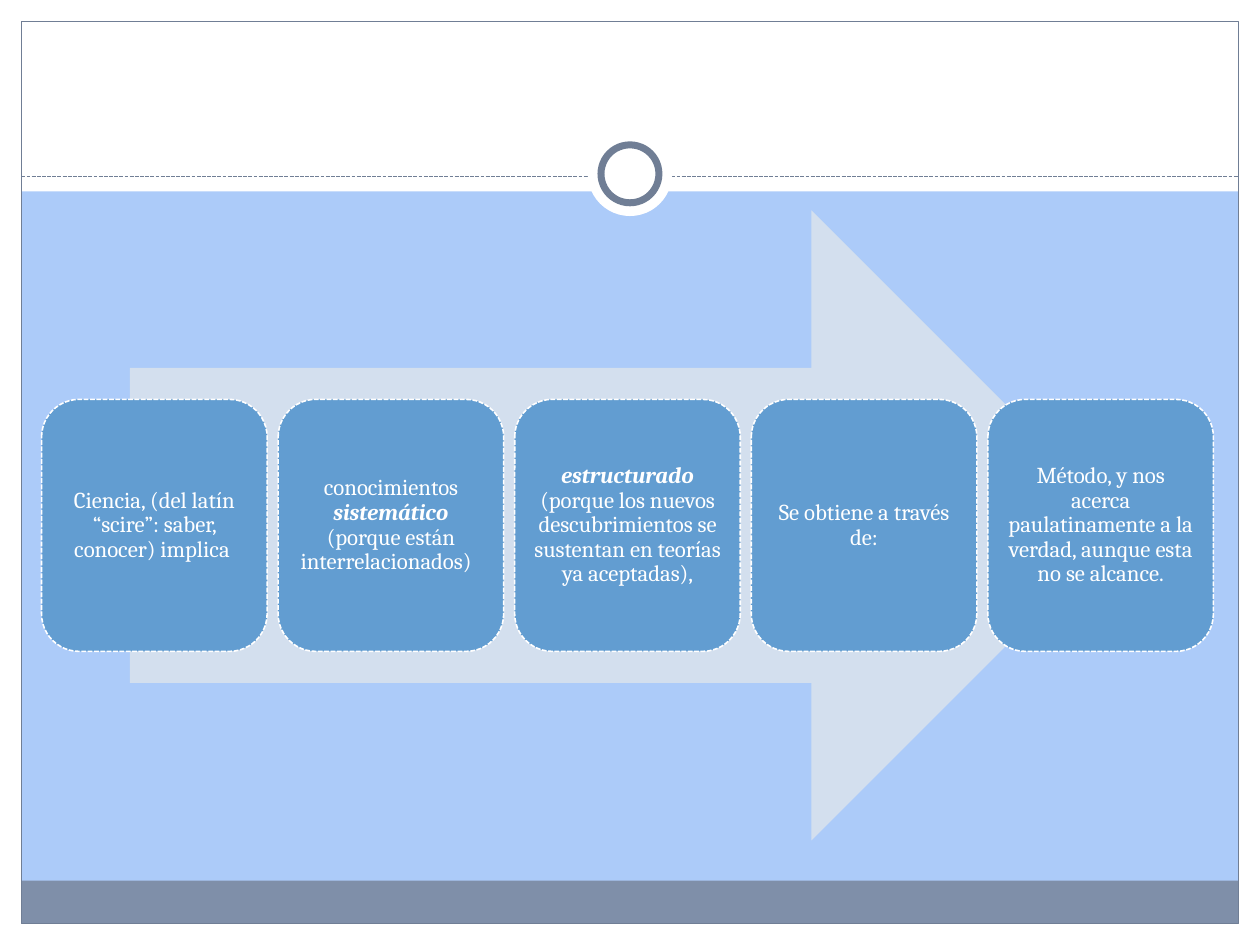
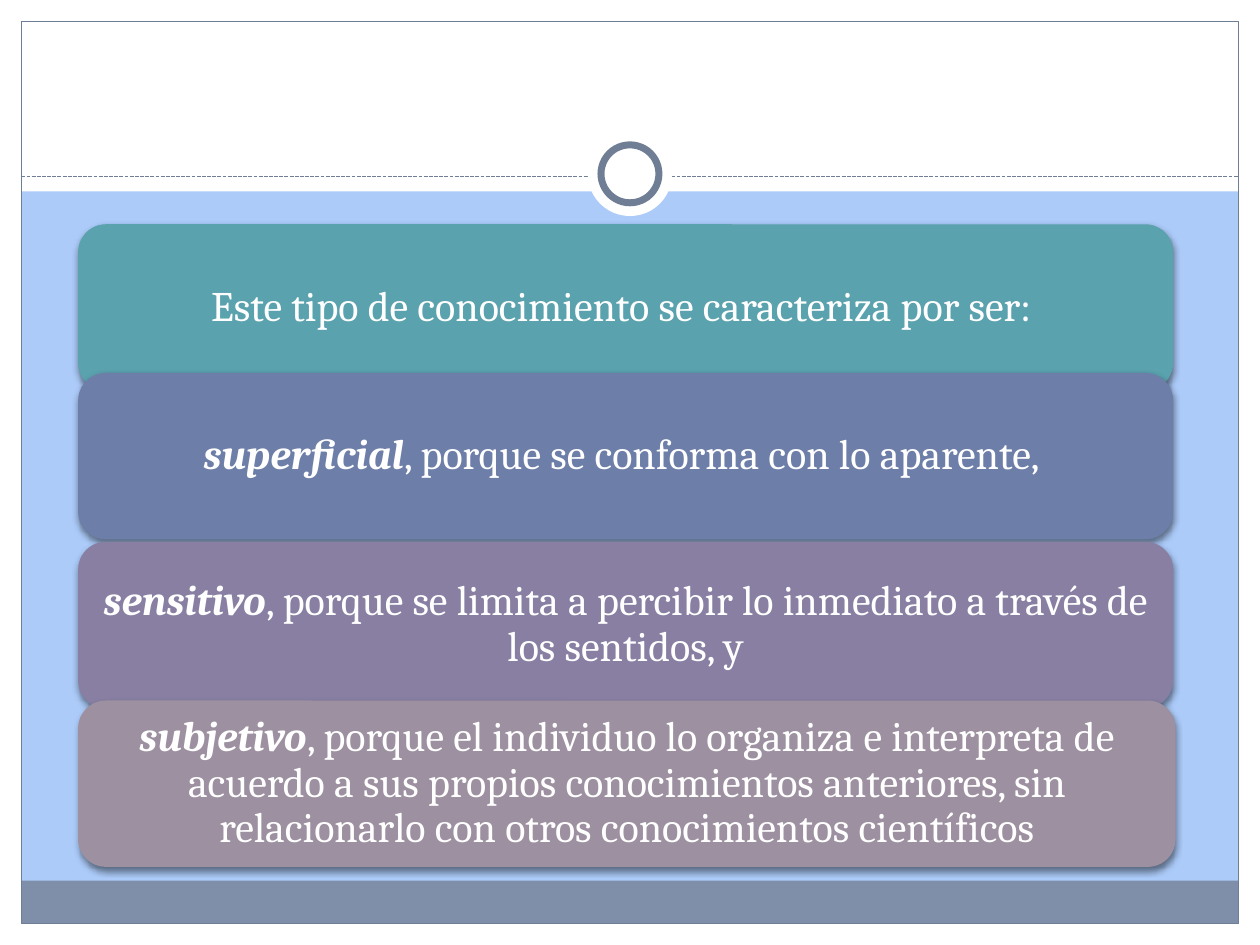
from lxml.etree import SubElement
from pptx import Presentation
from pptx.dml.color import RGBColor
from pptx.enum.dml import MSO_LINE
from pptx.enum.shapes import MSO_CONNECTOR, MSO_SHAPE
from pptx.enum.text import MSO_ANCHOR, PP_ALIGN
from pptx.oxml.ns import qn
from pptx.util import Inches, Pt

WHITE, SKY, BAND, FRAME = "FFFFFF", "ACCBF9", "7F8FA9", "707E95"
ARROW, CARD = "D3DFEE", "629DD1"
FONT = "Cambria"
EDGE = 0.17
PLAIN, STRONG = {"bold": False, "italic": False}, {"bold": True, "italic": True}

STEPS = [
    [("Ciencia, (del latín “scire”: saber, conocer) implica ", PLAIN)],
    [("conocimientos ", PLAIN), ("sistemático ", STRONG),
     ("(porque están interrelacionados)  ", PLAIN)],
    [("estructurado ", STRONG),
     ("(porque los nuevos descubrimientos se sustentan en teorías ya aceptadas),", PLAIN)],
    [("Se obtiene a través de:", PLAIN)],
    [("Método, y nos acerca paulatinamente a la verdad, aunque esta no se alcance.", PLAIN)],
]

TRAITS = [
    (0, 8.69, "5AA2AE", [("Este tipo de conocimiento se caracteriza por ser: ", PLAIN)]),
    (1.18, 8.69, "6D7FA8", [("superficial", STRONG),
                            (", porque se conforma con lo aparente, ", PLAIN)]),
    (2.52, 8.69, "887FA3", [("sensitivo", STRONG),
                            (", porque se limita a percibir lo inmediato a través de "
                             "los sentidos, y", PLAIN)]),
    (3.78, 8.71, "9D90A0", [("subjetivo", STRONG),
                            (", porque el individuo lo organiza e interpreta de acuerdo a sus "
                             "propios conocimientos anteriores, sin relacionarlo con otros "
                             "conocimientos científicos", PLAIN)]),
]


def rgb(value):
    return RGBColor.from_string(value)


def apply(target, values):
    for name, value in values.items():
        setattr(target, name, value)


def style_line(line, color, width, dash=None):
    line.color.rgb = rgb(color)
    apply(line, {"width": Pt(width), "dash_style": dash})


def add_box(s, kind, box, fill=None, line=None):
    sp = s.shapes.add_shape(kind, *map(Inches, box))
    sp.shadow.inherit = False
    if fill:
        sp.fill.solid()
        sp.fill.fore_color.rgb = rgb(fill)
    else:
        sp.fill.background()
    if line:
        style_line(sp.line, *line)
    else:
        sp.line.fill.background()
    return sp


def write(sp, runs, size, side=0.1):
    tf = sp.text_frame
    apply(tf, {"word_wrap": True, "vertical_anchor": MSO_ANCHOR.MIDDLE,
               "margin_left": Inches(side), "margin_right": Inches(side),
               "margin_top": Inches(0.05), "margin_bottom": Inches(0.05)})
    p = tf.paragraphs[0]
    apply(p, {"alignment": PP_ALIGN.CENTER, "line_spacing": 0.9})
    for text, emphasis in runs:
        r = p.add_run()
        r.text = text
        apply(r.font, {"name": FONT, "size": Pt(size), **emphasis})
        r.font.color.rgb = rgb(WHITE)


def cast_shadow(sp):
    effects = sp._element.spPr.find(qn("a:effectLst"))
    shadow = SubElement(effects, qn("a:outerShdw"), blurRad=str(Pt(4)), dist=str(Pt(2)),
                        dir="5400000", algn="ctr", rotWithShape="0")
    color = SubElement(shadow, qn("a:srgbClr"), val="000000")
    SubElement(color, qn("a:alpha"), val="45000")


def draw_frame(s, width, height):
    s.background.fill.solid()
    s.background.fill.fore_color.rgb = rgb(SKY)
    inner = width - 2 * EDGE
    for box in [(0, height - EDGE, width, EDGE), (0, 0, width, 1.52),
                (0, 0, EDGE, height), (width - EDGE, 0, EDGE, height)]:
        add_box(s, MSO_SHAPE.RECTANGLE, box, WHITE)
    add_box(s, MSO_SHAPE.RECTANGLE, (EDGE, 6.99, inner, 0.34), BAND)
    add_box(s, MSO_SHAPE.RECTANGLE, (EDGE, EDGE, inner, height - 2 * EDGE),
            line=(FRAME, 0.75))
    rule = s.shapes.add_connector(MSO_CONNECTOR.STRAIGHT, Inches(EDGE), Inches(1.4),
                                  Inches(width - EDGE), Inches(1.4))
    style_line(rule.line, FRAME, 0.75, MSO_LINE.SQUARE_DOT)
    SubElement(rule._element.spPr, qn("a:effectLst"))
    for size, line in [(0.67, None), (0.46, (FRAME, 4))]:
        add_box(s, MSO_SHAPE.OVAL, ((width - size) / 2, 1.38 - size / 2, size, size),
                WHITE, line)


def draw_process(s, left, top, width, height):
    arrow_width, card_width, card_height = 7.91, 1.79, 2
    add_box(s, MSO_SHAPE.RIGHT_ARROW, (left + 0.7, top, arrow_width, height), ARROW)
    pitch = (width - card_width) / (len(STEPS) - 1)
    card_top = top + (height - card_height) / 2
    for i, runs in enumerate(STEPS):
        card = add_box(s, MSO_SHAPE.ROUNDED_RECTANGLE,
                       (left + i * pitch, card_top, card_width, card_height),
                       CARD, (WHITE, 0.9, MSO_LINE.SQUARE_DOT))
        write(card, runs, 13, 0.05)


def draw_traits(s, left, top):
    for offset, width, fill, runs in TRAITS:
        bar = add_box(s, MSO_SHAPE.ROUNDED_RECTANGLE,
                      (left, top + offset, width, 1.32), fill)
        cast_shadow(bar)
        write(bar, runs, 24)


def main():
    prs = Presentation()
    width, height = 10, 7.5
    apply(prs, {"slide_width": Inches(width), "slide_height": Inches(height)})
    for draw, box in [(draw_process, (0.33, 1.67, 9.3, 5)), (draw_traits, (0.62, 1.78))]:
        s = prs.slides.add_slide(prs.slide_layouts[6])
        draw_frame(s, width, height)
        draw(s, *box)
    prs.save("out.pptx")


if __name__ == "__main__":
    main()
